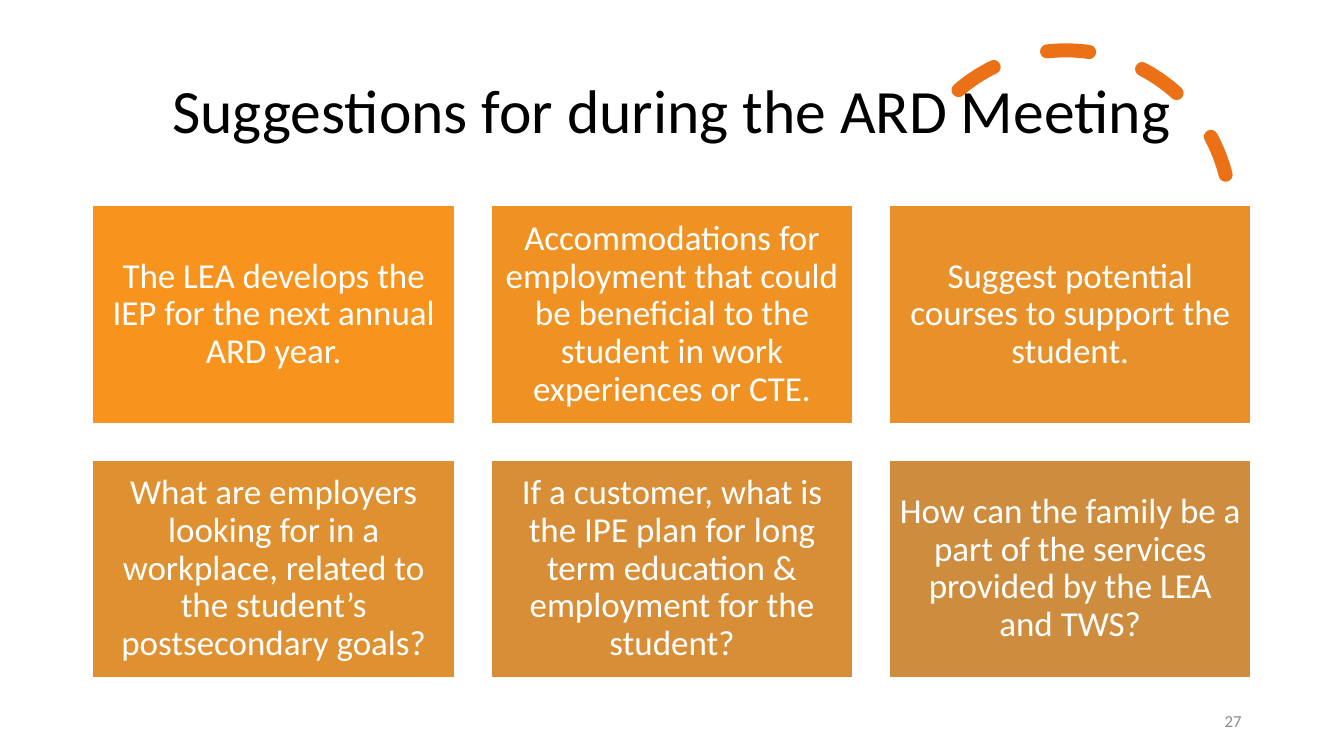
from pptx import Presentation
from pptx.dml.color import RGBColor as RGB
from pptx.enum.dml import MSO_LINE as Dash
from pptx.enum.shapes import MSO_SHAPE as Shape
from pptx.enum.text import MSO_ANCHOR as Anchor, MSO_AUTO_SIZE as AutoSize, PP_ALIGN as Align
from pptx.util import Pt

BLACK = RGB(0x00, 0x00, 0x00)
WHITE = RGB(0xFF, 0xFF, 0xFF)
GRAY = RGB(0x8C, 0x8C, 0x8C)
ORANGE = RGB(0xEC, 0x70, 0x16)
CARD_FILLS = [
    RGB(0xF8, 0x93, 0x1D), RGB(0xF0, 0x92, 0x23), RGB(0xE8, 0x91, 0x2A),
    RGB(0xDF, 0x90, 0x30), RGB(0xD7, 0x8E, 0x37), RGB(0xCE, 0x8D, 0x3E),
]
SUGGESTIONS = [
    "The LEA develops the IEP for the next annual ARD year.",
    "Accommodations for employment that could be beneficial to the student in work experiences or CTE.",
    "Suggest potential courses to support the student.",
    "What are employers looking for in a workplace, related to the student’s postsecondary goals?",
    "If a customer, what is the IPE plan for long term education & employment for the student?",
    "How can the family be a part of the services provided by the LEA and TWS?",
]
FONT = "Calibri"
COLUMNS = 3
LEFT, TOP = 66.2, 147
CARD_W, CARD_H = 258.5, 155.5
GAP = 26


def write(sp, text, *, size, color, align=Align.CENTER, spacing=0.9, inset=None):
    """Put one formatted paragraph, vertically centred, into a shape."""
    tf = sp.text_frame
    tf.word_wrap = True
    tf.auto_size = AutoSize.NONE
    tf.vertical_anchor = Anchor.MIDDLE
    if inset is not None:
        tf.margin_left = tf.margin_right = tf.margin_top = tf.margin_bottom = Pt(inset)
    p = tf.paragraphs[0]
    p.alignment = align
    p.line_spacing = spacing
    r = p.add_run()
    r.text = text
    r.font.name = FONT
    r.font.size = Pt(size)
    r.font.color.rgb = color


def add_title(s, text):
    """Move the title placeholder into place and fill it."""
    sp = s.shapes.title
    sp.left, sp.top, sp.width, sp.height = Pt(66), Pt(28.75), Pt(828), Pt(104.4)
    write(sp, text, size=44, color=BLACK)


def add_dashed_arc(s):
    """Draw the thick round-capped arc behind the title."""
    sp = s.shapes.add_shape(Shape.ARC, Pt(643.7), Pt(36), Pt(235.4), Pt(235.4))
    sp.adjustments[0] = 146.13
    sp.adjustments[1] = 0
    sp.rotation = 345.8
    sp.shadow.inherit = False
    sp.fill.background()
    sp.line.color.rgb = ORANGE
    sp.line.width = Pt(10)
    sp.line.dash_style = Dash.DASH
    sp.element.spPr.ln.set("cap", "rnd")
    s.shapes.title.element.addprevious(sp.element)


def add_card(s, index, text, fill):
    """Add one suggestion card at its place in the grid."""
    row, col = divmod(index, COLUMNS)
    sp = s.shapes.add_shape(
        Shape.RECTANGLE,
        Pt(LEFT + col * (CARD_W + GAP)), Pt(TOP + row * (CARD_H + GAP)),
        Pt(CARD_W), Pt(CARD_H),
    )
    sp.shadow.inherit = False
    sp.fill.solid()
    sp.fill.fore_color.rgb = fill
    sp.line.color.rgb = WHITE
    sp.line.width = Pt(1)
    write(sp, text, size=25, color=WHITE, inset=7.2)


def add_slide_number(s, text):
    """Add the page number at the lower right."""
    sp = s.shapes.add_textbox(Pt(678), Pt(500.5), Pt(216), Pt(28.75))
    write(sp, text, size=12, color=GRAY, align=Align.RIGHT, spacing=1.0)
    sp.text_frame.paragraphs[0].space_after = Pt(6)


def main():
    """Build the slide and save it."""
    prs = Presentation()
    prs.slide_width, prs.slide_height = Pt(960), Pt(540)
    s = prs.slides.add_slide(prs.slide_layouts.get_by_name("Title Only"))
    add_title(s, "Suggestions for during the ARD Meeting")
    add_dashed_arc(s)
    add_slide_number(s, "27")
    for index, (text, fill) in enumerate(zip(SUGGESTIONS, CARD_FILLS)):
        add_card(s, index, text, fill)
    prs.save("out.pptx")


if __name__ == "__main__":
    main()
